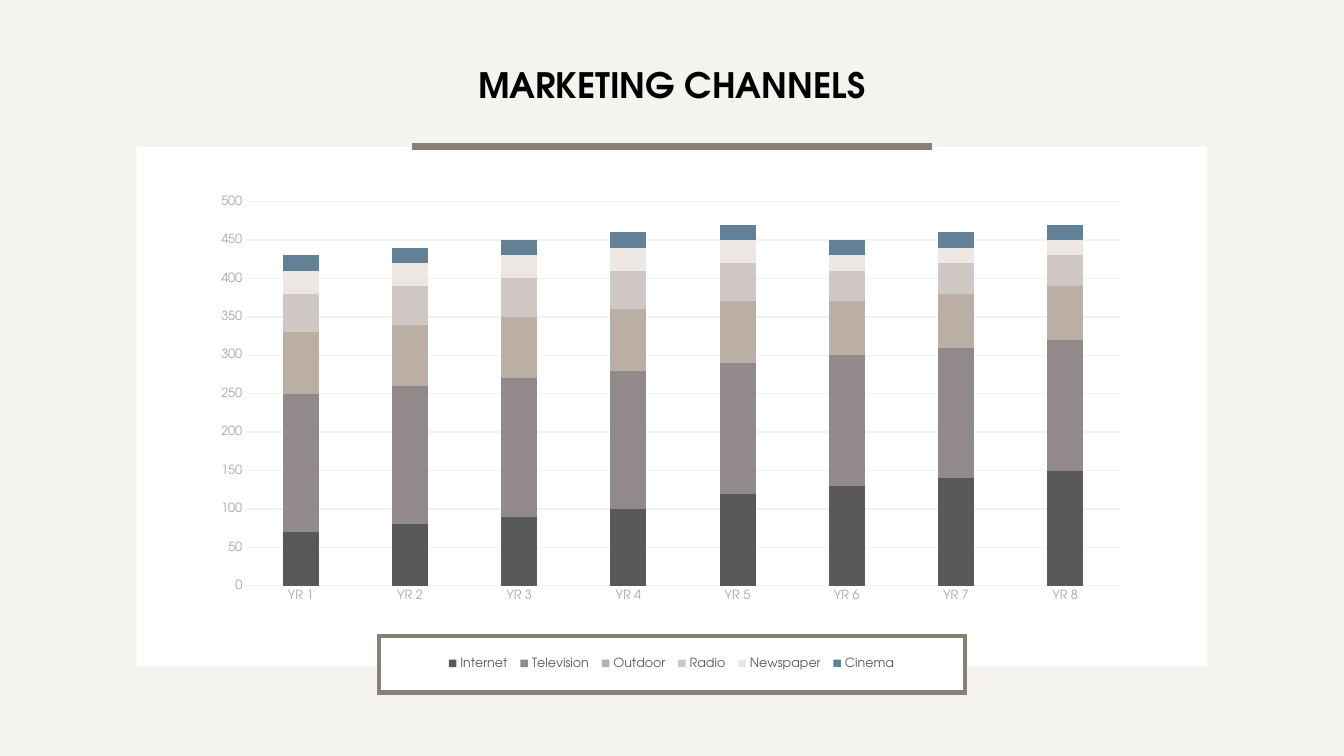
from dataclasses import dataclass
from typing import Optional

from lxml.etree import SubElement
from pptx import Presentation
from pptx.chart.axis import _BaseAxis
from pptx.chart.data import CategoryChartData
from pptx.dml.color import RGBColor
from pptx.enum.chart import XL_CHART_TYPE, XL_LEGEND_POSITION, XL_TICK_MARK
from pptx.enum.shapes import MSO_CONNECTOR, MSO_SHAPE
from pptx.enum.text import MSO_ANCHOR, MSO_AUTO_SIZE, PP_ALIGN
from pptx.oxml.ns import qn
from pptx.oxml.xmlchemy import BaseOxmlElement
from pptx.slide import Slide
from pptx.text.text import Font
from pptx.util import Inches, Length, Pt


@dataclass(frozen=True)
class Theme:
    font: str = "TeX Gyre Adventor"
    background: str = "F4F3EE"
    panel: str = "FFFFFF"
    accent: str = "897F75"
    title: str = "000000"
    legend: str = "595959"
    axis: str = "A6A6A6"
    grid: str = "F2F2F2"
    title_size: float = 25
    chart_size: float = 10
    label_size: float = 9
    frame_width: float = 3
    rule_width: float = 4.5
    grid_width: float = 1


@dataclass(frozen=True)
class Box:
    column: float
    row: float
    columns: float
    rows: float


@dataclass(frozen=True)
class Panel:
    box: Box
    outline: Optional[str] = None


@dataclass(frozen=True)
class Channel:
    name: str
    values: tuple[int, ...]
    color: str


THEME = Theme()
SLIDE_WIDTH = Inches(13.333)
SLIDE_HEIGHT = Inches(7.5)
GRID_CELLS = 100

PANELS = (
    Panel(Box(10.15, 19.47, 79.67, 68.67)),
    Panel(Box(28.2, 84.13, 43.6, 7.47), THEME.accent),
)
CHART_BOX = Box(14.5, 20.53, 70.73, 69.73)
TITLE_BOX = Box(34.66, 7.73, 30.68, 6.93)
RULE_BOX = Box(30.62, 19.38, 38.76, 0)
PLOT_BOX = Box(5.4, 8.8, 91.9, 72.9)
LEGEND_BOX = Box(25.8, 93.4, 48.7, 6)

YEARS = tuple(f"YR {year}" for year in range(1, 9))
CHANNELS = (
    Channel("Internet", (70, 80, 90, 100, 120, 130, 140, 150), "595959"),
    Channel("Television", (180, 180, 180, 180, 170, 170, 170, 170), "92898A"),
    Channel("Outdoor", (80, 80, 80, 80, 80, 70, 70, 70), "BBAEA5"),
    Channel("Radio", (50, 50, 50, 50, 50, 40, 40, 40), "CFC7C3"),
    Channel("Newspaper", (30, 30, 30, 30, 30, 20, 20, 20), "ECE7E3"),
    Channel("Cinema", (20, 20, 20, 20, 20, 20, 20, 20), "628196"),
)


def color(value: str) -> RGBColor:
    return RGBColor.from_string(value)


def place(box: Box) -> tuple[Length, Length, Length, Length]:
    column_width = SLIDE_WIDTH / GRID_CELLS
    row_height = SLIDE_HEIGHT / GRID_CELLS
    return (
        Length(round(box.column * column_width)),
        Length(round(box.row * row_height)),
        Length(round(box.columns * column_width)),
        Length(round(box.rows * row_height)),
    )


def style_font(font: Font, size: float, value: str, bold: bool = False) -> None:
    font.name = THEME.font
    font.size = Pt(size)
    font.bold = bold
    font.color.rgb = color(value)


def draw_panel(slide: Slide, panel: Panel) -> None:
    shape = slide.shapes.add_shape(MSO_SHAPE.RECTANGLE, *place(panel.box))
    shape.shadow.inherit = False
    shape.fill.solid()
    shape.fill.fore_color.rgb = color(THEME.panel)
    if panel.outline:
        shape.line.color.rgb = color(panel.outline)
        shape.line.width = Pt(THEME.frame_width)
        outline = shape._element.spPr.find(qn("a:ln"))
        SubElement(outline, qn("a:miter")).set("lim", "800000")
    else:
        shape.line.fill.background()


def style_axis(axis: _BaseAxis) -> None:
    axis.major_tick_mark = XL_TICK_MARK.NONE
    axis.minor_tick_mark = XL_TICK_MARK.NONE
    axis.format.line.fill.background()
    style_font(axis.tick_labels.font, THEME.label_size, THEME.axis)


def fix_layout(parent: BaseOxmlElement, index: int, box: Box, target: str = "") -> None:
    layout = parent.find(qn("c:layout"))
    if layout is None:
        layout = SubElement(parent, qn("c:layout"))
        parent.insert(index, layout)
    manual = SubElement(layout, qn("c:manualLayout"))
    settings = {"layoutTarget": target} if target else {}
    settings |= {"xMode": "edge", "yMode": "edge"}
    shares = (box.column, box.row, box.columns, box.rows)
    settings |= {tag: str(share / GRID_CELLS) for tag, share in zip("xywh", shares)}
    for tag, value in settings.items():
        SubElement(manual, qn(f"c:{tag}")).set("val", value)


def draw_chart(slide: Slide) -> None:
    data = CategoryChartData()
    data.categories = YEARS
    for channel in CHANNELS:
        data.add_series(channel.name, channel.values)
    frame = slide.shapes.add_chart(
        XL_CHART_TYPE.COLUMN_STACKED, *place(CHART_BOX), data
    )
    chart = frame.chart
    chart.has_title = False
    style_font(chart.font, THEME.chart_size, THEME.legend)

    plot = chart.plots[0]
    plot.gap_width = 203
    plot.overlap = 100
    plot.vary_by_categories = False
    for series, channel in zip(plot.series, CHANNELS):
        series.format.fill.solid()
        series.format.fill.fore_color.rgb = color(channel.color)

    style_axis(chart.category_axis)
    style_axis(chart.value_axis)
    chart.value_axis.minimum_scale = 0
    chart.value_axis.maximum_scale = 500
    chart.value_axis.major_unit = 50
    chart.value_axis.has_major_gridlines = True
    gridline = chart.value_axis.major_gridlines.format.line
    gridline.color.rgb = color(THEME.grid)
    gridline.width = Pt(THEME.grid_width)

    chart.has_legend = True
    chart.legend.position = XL_LEGEND_POSITION.BOTTOM
    chart.legend.include_in_layout = False
    style_font(chart.legend.font, THEME.label_size, THEME.legend)
    fix_layout(plot._element.getparent(), 0, PLOT_BOX, "inner")
    fix_layout(chart.legend._element, 1, LEGEND_BOX)


def draw_rule(slide: Slide) -> None:
    left, top, width, height = place(RULE_BOX)
    rule = slide.shapes.add_connector(
        MSO_CONNECTOR.STRAIGHT, left, top, left + width, top + height
    )
    rule.line.color.rgb = color(THEME.accent)
    rule.line.width = Pt(THEME.rule_width)
    SubElement(rule._element.spPr, qn("a:effectLst"))


def draw_title(slide: Slide) -> None:
    text_frame = slide.shapes.add_textbox(*place(TITLE_BOX)).text_frame
    text_frame.text = "MARKETING CHANNELS"
    text_frame.word_wrap = False
    text_frame.auto_size = MSO_AUTO_SIZE.SHAPE_TO_FIT_TEXT
    text_frame.vertical_anchor = MSO_ANCHOR.TOP
    paragraph = text_frame.paragraphs[0]
    paragraph.alignment = PP_ALIGN.CENTER
    style_font(paragraph.runs[0].font, THEME.title_size, THEME.title, bold=True)


def main() -> None:
    presentation = Presentation()
    presentation.slide_width = SLIDE_WIDTH
    presentation.slide_height = SLIDE_HEIGHT
    slide = presentation.slides.add_slide(presentation.slide_layouts[6])
    slide.background.fill.solid()
    slide.background.fill.fore_color.rgb = color(THEME.background)
    for panel in PANELS:
        draw_panel(slide, panel)
    draw_chart(slide)
    draw_rule(slide)
    draw_title(slide)
    presentation.save("out.pptx")


if __name__ == "__main__":
    main()
